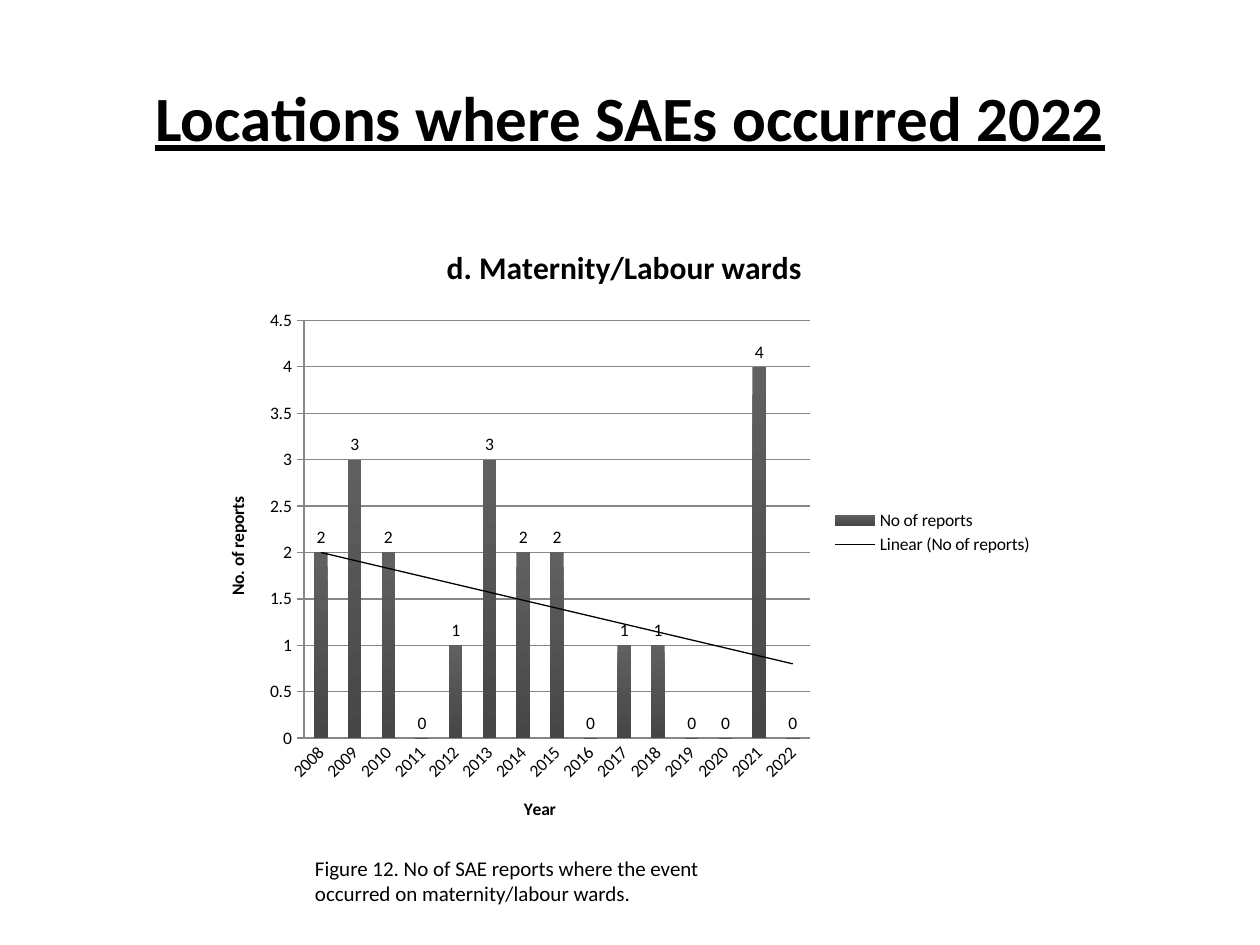
from lxml import etree
from pptx import Presentation
from pptx.chart.data import CategoryChartData
from pptx.dml.color import RGBColor
from pptx.enum import chart as ch, text
from pptx.oxml import parse_xml
from pptx.oxml.ns import nsdecls, qn
from pptx.util import Cm, Pt

BLACK = RGBColor(0x00, 0x00, 0x00)
GRID = RGBColor(0x86, 0x86, 0x86)
BAR_TOP = RGBColor(0x60, 0x60, 0x60)
BAR_BOTTOM = RGBColor(0x46, 0x46, 0x46)
FONT = "Calibri"


def set_font(font, size, bold=False):
    font.name, font.size, font.bold = FONT, Pt(size), bold
    font.color.rgb = BLACK


def add_text(s, box, words, size, bold=False):
    tf = s.shapes.add_textbox(*[Cm(v) for v in box]).text_frame
    tf.word_wrap = True
    p = tf.paragraphs[0]
    p.text = words
    set_font(p.font, size, bold)
    return tf


prs = Presentation()
prs.slide_width, prs.slide_height = Cm(25.4), Cm(19.05)
s = prs.slides.add_slide(prs.slide_layouts[6])

# Slide title
tf = add_text(s, (1.27, 0.76, 22.86, 3.18),
              "Locations where SAEs occurred 2022", 36, True)
tf.vertical_anchor = text.MSO_ANCHOR.MIDDLE
tf.paragraphs[0].alignment = text.PP_ALIGN.CENTER
tf.paragraphs[0].font.underline = True

# Column chart of reports per year
data = CategoryChartData()
data.categories = [str(year) for year in range(2008, 2023)]
data.add_series("No of reports", (2, 3, 2, 0, 1, 3, 2, 2, 0, 1, 1, 0, 0, 4, 0))
chart = s.shapes.add_chart(ch.XL_CHART_TYPE.COLUMN_CLUSTERED, Cm(4.09), Cm(4.45),
                           Cm(16.99), Cm(12.57), data).chart
set_font(chart.font, 10)

# Chart and axis titles
for owner, words, size in ((chart, "d. Maternity/Labour wards", 18),
                           (chart.category_axis, "Year", 10),
                           (chart.value_axis, "No. of reports", 10)):
    title = owner.chart_title if owner is chart else owner.axis_title
    p = title.text_frame.paragraphs[0]
    p.text = words
    set_font(p.font, size, True)

# Axes, gridlines and legend
axis = chart.value_axis
axis.minimum_scale, axis.maximum_scale, axis.major_unit = 0, 4.5, 0.5
axis.major_tick_mark = ch.XL_TICK_MARK.OUTSIDE
chart.category_axis.major_tick_mark = ch.XL_TICK_MARK.NONE
for line in (axis.format.line, axis.major_gridlines.format.line,
             chart.category_axis.format.line):
    line.color.rgb = GRID
    line.width = Pt(0.75)
body = chart.category_axis.tick_labels.font._element.getparent().getparent().getparent() \
    .find(qn("a:bodyPr"))
body.set("rot", "-2700000")
chart.has_legend = True
chart.legend.position = ch.XL_LEGEND_POSITION.RIGHT
chart.legend.include_in_layout = False

# Bars and their labels
plot = chart.plots[0]
plot.gap_width = 150
plot.vary_by_categories = False
series = plot.series[0]
fill = series.format.fill
fill.gradient()
fill.gradient_angle = 270
for stop, color in zip(fill.gradient_stops, (BAR_TOP, BAR_BOTTOM)):
    stop.color.rgb = color
labels = series.data_labels
labels.show_value = True
labels.position = ch.XL_LABEL_POSITION.OUTSIDE_END
set_font(labels.font, 10)

# Linear trend line
series._element.find(qn("c:cat")).addprevious(parse_xml(
    f'<c:trendline {nsdecls("c", "a")}><c:spPr><a:ln w="9525"><a:solidFill>'
    f'<a:srgbClr val="{BLACK}"/></a:solidFill></a:ln></c:spPr>'
    '<c:trendlineType val="linear"/><c:dispRSqr val="0"/><c:dispEq val="0"/>'
    '</c:trendline>'))

# Plot area placement, as fractions of the chart
area = chart._chartSpace.chart.plotArea
for old in area.findall(qn("c:layout")):
    area.remove(old)
layout = etree.Element(qn("c:layout"))
manual = etree.SubElement(layout, qn("c:manualLayout"))
for tag, val in (("layoutTarget", "inner"), ("xMode", "edge"), ("yMode", "edge"),
                 ("x", 0.12), ("y", 0.16), ("w", 0.6), ("h", 0.67)):
    etree.SubElement(manual, qn(f"c:{tag}")).set("val", str(val))
area.insert(0, layout)

# Caption
add_text(s, (6.1, 17.12, 9.8, 1.27),
         "Figure 12. No of SAE reports where the event occurred on "
         "maternity/labour wards.", 12)

prs.save("out.pptx")
